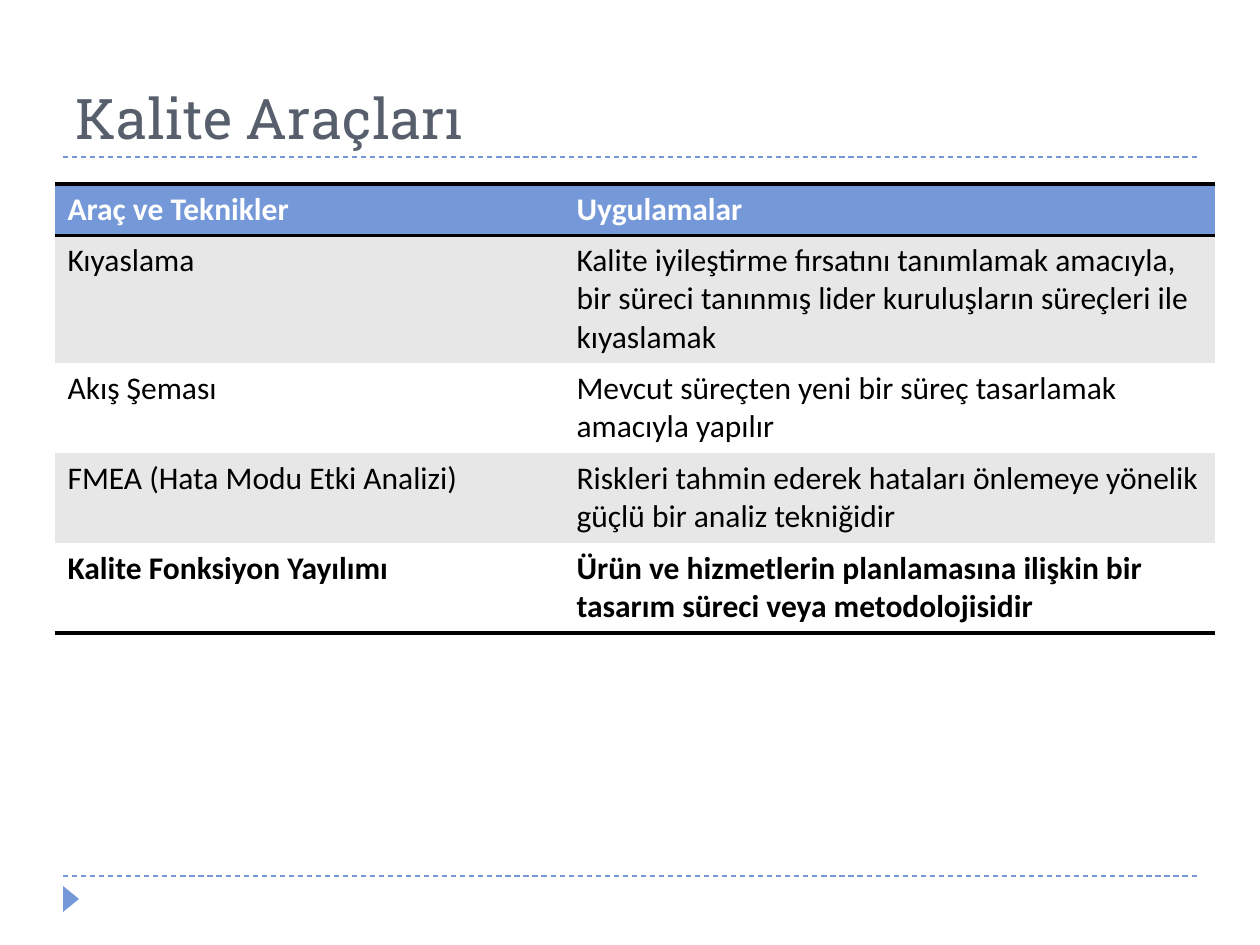
from dataclasses import dataclass

from lxml.etree import SubElement
from pptx import Presentation
from pptx.dml.color import RGBColor
from pptx.enum.dml import MSO_LINE
from pptx.enum.shapes import MSO_CONNECTOR, MSO_SHAPE
from pptx.enum.text import MSO_ANCHOR, MSO_AUTO_SIZE, PP_ALIGN
from pptx.oxml import parse_xml
from pptx.oxml.ns import nsdecls, qn
from pptx.slide import Slide
from pptx.table import _Cell
from pptx.text.text import _Paragraph
from pptx.util import Emu, Pt

PIXELS_PER_INCH = 126
BLUE = RGBColor(0x75, 0x98, 0xD9)
SLATE = RGBColor(0x57, 0x5F, 0x6D)
GRAY = RGBColor(0xE7, 0xE7, 0xE7)
WHITE = RGBColor(0xFF, 0xFF, 0xFF)
BLACK = RGBColor(0x00, 0x00, 0x00)
NO_TABLE_STYLE = "{2D5ABB26-0587-4C30-8999-92F81FD0307C}"


@dataclass(frozen=True)
class ToolRow:
    """One row of the quality tools table."""

    tool: str
    use: str
    height: int
    fill: RGBColor
    color: RGBColor = BLACK
    bold: bool = False
    borders: tuple[str, ...] = ()


ROWS = (
    ToolRow("Araç ve Teknikler", "Uygulamalar", 51, BLUE, WHITE, True, ("T", "B")),
    ToolRow(
        "Kıyaslama",
        "Kalite iyileştirme fırsatını tanımlamak amacıyla, bir süreci tanınmış "
        "lider kuruluşların süreçleri ile kıyaslamak",
        128, GRAY,
    ),
    ToolRow("Akış Şeması", "Mevcut süreçten yeni bir süreç tasarlamak amacıyla yapılır", 90, WHITE),
    ToolRow(
        "FMEA (Hata Modu Etki Analizi)",
        "Riskleri tahmin ederek hataları önlemeye yönelik güçlü bir analiz tekniğidir",
        90, GRAY,
    ),
    ToolRow(
        "Kalite Fonksiyon Yayılımı",
        "Ürün ve hizmetlerin planlamasına ilişkin bir tasarım süreci veya metodolojisidir",
        90, WHITE, bold=True, borders=("B",),
    ),
)
COLUMN_WIDTHS = (509, 651)
RULE_TOPS = (876, 157)


def px(length: int) -> Emu:
    """Turn a length in pixels into EMU."""
    return Emu(round(length * 914400 / PIXELS_PER_INCH))


def add_span(para: _Paragraph, text: str, font: str, size: int, color: RGBColor, bold: bool = False) -> None:
    """Add one formatted run to a paragraph."""
    span = para.add_run()
    span.text = text
    span.font.name = font
    span.font.size = Pt(size)
    span.font.bold = bold
    span.font.color.rgb = color


def add_title(page: Slide) -> None:
    """Place and fill the title placeholder."""
    box = page.shapes.title
    box.left, box.top, box.width, box.height = px(63), px(21), px(1134), px(136)
    frame = box.text_frame
    frame.auto_size = MSO_AUTO_SIZE.NONE
    frame.vertical_anchor = MSO_ANCHOR.BOTTOM
    para = frame.paragraphs[0]
    para.alignment = PP_ALIGN.LEFT
    add_span(para, "Kalite Araçları", "Roboto Slab", 32, SLATE)


def add_rule(page: Slide, top: int) -> None:
    """Draw a dashed rule across the page."""
    rule = page.shapes.add_connector(MSO_CONNECTOR.STRAIGHT, px(63), px(top), px(1197), px(top))
    rule.line.color.rgb = BLUE
    rule.line.width = Pt(0.75)
    rule.line.dash_style = MSO_LINE.DASH
    SubElement(rule._element.spPr, qn("a:effectLst"))


def add_marker(page: Slide) -> None:
    """Draw the footer triangle that points right."""
    marker = page.shapes.add_shape(MSO_SHAPE.ISOSCELES_TRIANGLE, px(58), px(891), px(26), px(16))
    marker.rotation = 90
    marker.shadow.inherit = False
    marker.fill.solid()
    marker.fill.fore_color.rgb = BLUE
    marker.line.fill.background()


def add_border(cell: _Cell, side: str) -> None:
    """Give a cell a black border on side T or B."""
    border = parse_xml(
        f'<a:ln{side} {nsdecls("a")} w="{Pt(2)}"><a:solidFill>'
        f'<a:srgbClr val="{BLACK}"/></a:solidFill></a:ln{side}>'
    )
    properties = cell._tc.get_or_add_tcPr()
    properties.insert(len(properties) - 1, border)


def fill_cell(cell: _Cell, text: str, row: ToolRow) -> None:
    """Write and format one table cell."""
    add_span(cell.text_frame.paragraphs[0], text, "Calibri", 18, row.color, row.bold)
    cell.fill.solid()
    cell.fill.fore_color.rgb = row.fill
    for side in row.borders:
        add_border(cell, side)


def add_tools_table(page: Slide) -> None:
    """Build the table of tools and their uses."""
    height = sum(row.height for row in ROWS)
    table = page.shapes.add_table(
        len(ROWS), len(COLUMN_WIDTHS), px(55), px(184), px(sum(COLUMN_WIDTHS)), px(height)
    ).table
    table._tbl.tblPr.find(qn("a:tableStyleId")).text = NO_TABLE_STYLE
    for column, width in zip(table.columns, COLUMN_WIDTHS):
        column.width = px(width)
    for table_row, row in zip(table.rows, ROWS):
        table_row.height = px(row.height)
        for cell, text in zip(table_row.cells, (row.tool, row.use)):
            fill_cell(cell, text, row)


def main() -> None:
    """Build and save the deck."""
    deck = Presentation()
    deck.slide_width, deck.slide_height = px(1260), px(945)
    page = deck.slides.add_slide(deck.slide_layouts[5])
    for top in RULE_TOPS:
        add_rule(page, top)
    add_marker(page)
    add_title(page)
    add_tools_table(page)
    deck.save("out.pptx")


if __name__ == "__main__":
    main()
